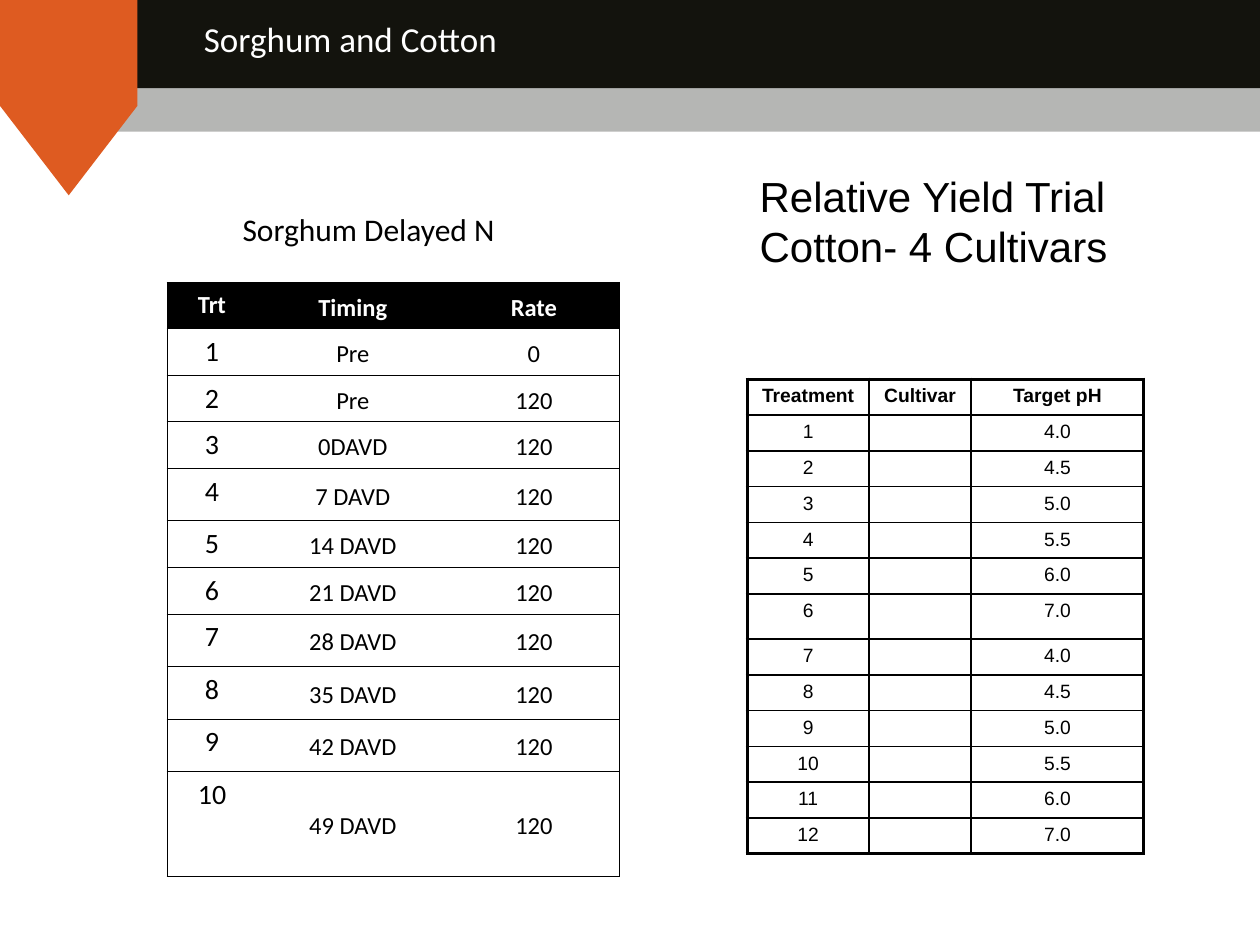
from lxml import etree
from pptx import Presentation
from pptx import util as u
from pptx.dml import color
from pptx.enum import shapes, text
from pptx.oxml import ns

COLORS = {"black": "000000", "white": "FFFFFF", "ink": "13130D",
          "gray": "A9AAA8", "orange": "DE5B21"}
CENTER = text.PP_ALIGN.CENTER
TOP, MIDDLE = text.MSO_ANCHOR.TOP, text.MSO_ANCHOR.MIDDLE


class SlideBuilder:
    """Hold the style and the current slide, and draw each kind of element."""

    def __init__(self, slide):
        self.slide = slide

    def rgb(self, name):
        return color.RGBColor.from_string(COLORS[name])

    def apply(self, target, values):
        for key, value in values.items():
            setattr(target, key, value)

    def fill_paragraph(self, paragraph, words, font, ink="black", layout=None):
        self.apply(paragraph, layout or {})
        paragraph.text = words
        for run in paragraph.runs:
            self.apply(run.font, font)
            run.font.color.rgb = self.rgb(ink)
        if not words:
            etree.SubElement(paragraph._p, ns.qn("a:endParaRPr"),
                             sz=str(int(font["size"].pt * 100)))

    def shape(self, kind, box, fill, rotation=0, opacity=100):
        panel = self.slide.shapes.add_shape(kind, *map(u.Pt, box))
        panel.shadow.inherit = False
        panel.rotation = rotation
        panel.fill.solid()
        panel.fill.fore_color.rgb = self.rgb(fill)
        panel.line.fill.background()
        if opacity < 100:
            tint = panel._element.spPr.find(".//" + ns.qn("a:srgbClr"))
            etree.SubElement(tint, ns.qn("a:alpha"), val=str(opacity * 1000))

    def text(self, box, words, font, ink="black", wrap=True):
        frame = self.slide.shapes.add_textbox(*map(u.Pt, box)).text_frame
        self.apply(frame, {"word_wrap": wrap,
                           "auto_size": text.MSO_AUTO_SIZE.SHAPE_TO_FIT_TEXT})
        self.fill_paragraph(frame.paragraphs[0], words, font, ink)

    def borders(self, cell, widths):
        properties = cell._tc.get_or_add_tcPr()
        for order, (side, width) in enumerate(zip("LRTB", widths)):
            edge = etree.Element(ns.qn("a:ln" + side), w=str(int(u.Pt(width))))
            if width:
                fill = etree.SubElement(edge, ns.qn("a:solidFill"))
                etree.SubElement(fill, ns.qn("a:srgbClr"), val=COLORS["black"])
            else:
                etree.SubElement(edge, ns.qn("a:noFill"))
            properties.insert(order, edge)

    def table(self, left, top, columns, heights, rows, lines, style):
        """Draw rows; lines gives outer, inner vertical and inner horizontal widths."""
        size = len(rows), len(columns)
        grid = self.slide.shapes.add_table(
            *size, *map(u.Pt, (left, top, sum(columns), sum(heights)))).table
        self.apply(grid, {"first_row": False, "horz_banding": False})
        for column, width in zip(grid.columns, columns):
            column.width = u.Pt(width)
        for row, height in zip(grid.rows, heights):
            row.height = u.Pt(height)
        outer, vertical, horizontal = lines
        for r, row in enumerate(rows):
            for c, words in enumerate(row):
                cell = grid.cell(r, c)
                look, font, layout, fill, ink = style(r, c)
                self.apply(cell, look)
                self.fill_paragraph(cell.text_frame.paragraphs[0], words, font, ink, layout)
                cell.fill.solid()
                cell.fill.fore_color.rgb = self.rgb(fill)
                self.borders(cell, (vertical if c else outer,
                                    vertical if c < size[1] - 1 else outer,
                                    horizontal if r else outer,
                                    horizontal if r < size[0] - 1 else outer))


def margins(side, edge):
    return {"margin_left": u.Pt(side), "margin_right": u.Pt(side),
            "margin_top": u.Pt(edge), "margin_bottom": u.Pt(edge)}


def font(name, size, bold=False):
    return {"name": name, "size": u.Pt(size), "bold": bold}


def sorghum_style(r, c):
    header = r == 0
    look = {**(margins(5.4, 0) if c else margins(7.2, 3.6)),
            "vertical_anchor": MIDDLE if header or c else TOP}
    layout = {"alignment": CENTER, "line_spacing": 1.15 if c else 1.0}
    face = font("Calibri", 14 if header or c else 16, header)
    return look, face, layout, *(("black", "white") if header else ("white", "black"))


def cotton_style(r, c):
    look = {**margins(7.2, 3.6), "vertical_anchor": TOP}
    return look, font("Arial", 11, r == 0), {"alignment": CENTER}, "white", "black"


def main():
    deck = Presentation()
    deck.slide_width, deck.slide_height = u.Pt(720), u.Pt(540)
    page = SlideBuilder(deck.slides.add_slide(deck.slide_layouts[6]))

    kinds = shapes.MSO_SHAPE
    page.shape(kinds.RECTANGLE, (55.4, 45.4, 664.6, 29.8), "gray", opacity=86)
    page.shape(kinds.RECTANGLE, (0, 0, 720, 50.4), "ink")
    page.shape(kinds.RECTANGLE, (0, 0, 78.5, 60.6), "orange")
    page.shape(kinds.ISOSCELES_TRIANGLE, (0, 60.5, 78.5, 51.1), "orange", rotation=180)
    page.text((109.4, 6.5, 576, 31.5), "Sorghum and Cotton", font("Calibri", 20), "white")

    timings = ["Pre", "Pre", "0DAVD"] + [f"{day} DAVD" for day in range(7, 50, 7)]
    sorghum = [("Trt", "Timing", "Rate")] + [
        (str(trt), timing, "120" if trt > 1 else "0")
        for trt, timing in enumerate(timings, 1)]
    short, tall = 26.6, 30
    sorghum_heights = [short] * 4 + [tall] + [short] * 2 + [tall] * 3 + [60]
    page.table(95.4, 161.3, (51.5, 109.5, 97.5), sorghum_heights, sorghum,
               (0.5, 0, 0.5), sorghum_style)
    page.text((131.5, 116.6, 186.5, 29), "Sorghum Delayed N", font("Calibri", 18))

    targets = ["4.0", "4.5", "5.0", "5.5", "6.0", "7.0"] * 2
    cotton = [("Treatment", "Cultivar", "Target pH")] + [
        (str(treatment), "", target) for treatment, target in enumerate(targets, 1)]
    cotton_heights = [20.4] * 6 + [25.9] + [20.4] * 6
    page.table(427, 216.7, (69.6, 58.4, 98.6), cotton_heights, cotton,
               (2.25, 1, 1), cotton_style)
    page.text((427, 93.6, 213.8, 65.5), "Relative Yield Trial\vCotton- 4 Cultivars",
              font("Arial", 24), wrap=False)

    deck.save("out.pptx")


if __name__ == "__main__":
    main()
